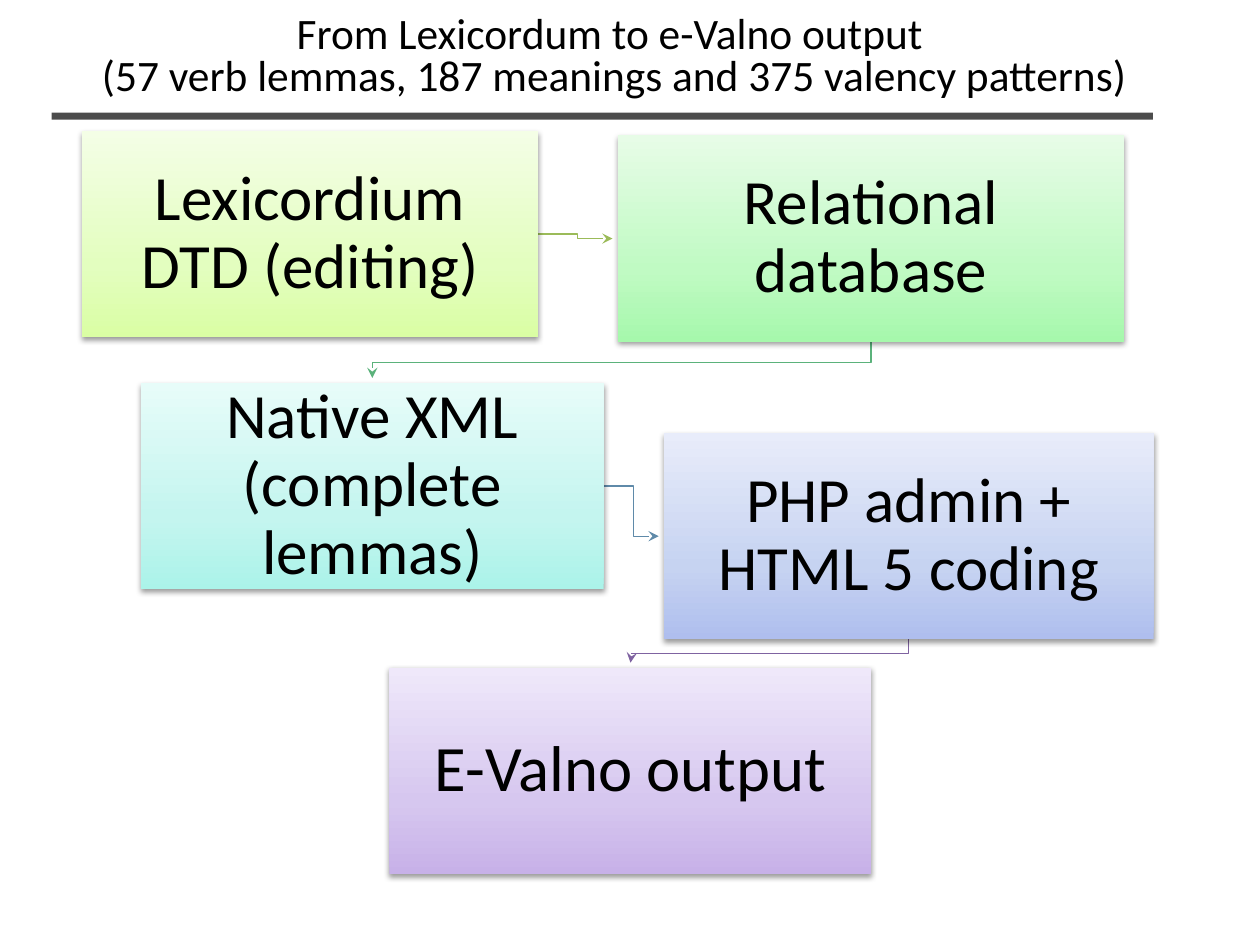
from copy import deepcopy
from itertools import pairwise

from lxml.etree import SubElement
from pptx import Presentation
from pptx.dml.color import RGBColor
from pptx.enum.shapes import MSO_CONNECTOR, MSO_SHAPE
from pptx.enum.text import MSO_ANCHOR, MSO_AUTO_SIZE, PP_ALIGN
from pptx.oxml.ns import qn
from pptx.util import Cm, Pt

STEP_HEIGHT = 4.16
ARROW_GAP = 0.1
STEPS = [
    ("Lexicordium DTD (editing)", (1.65, 2.64, 9.2), 36,
     ("DAFEA4", "E3FEBF", "F4FEE6")),
    ("Relational database", (12.45, 2.73, 10.22), 36,
     ("A6F8AC", "C0FAC3", "E7FCE7")),
    ("Native XML (complete lemmas)", (2.84, 7.72, 9.33), 36,
     ("ABF3E9", "C4F5EF", "E7FCF9")),
    ("PHP admin + HTML 5 coding", (13.38, 8.73, 9.88), 36,
     ("AFBEEE", "C6D3F1", "E8ECFA")),
    ("E-Valno output", (7.85, 13.46, 9.72), 37,
     ("C7B1E8", "D6C7EF", "EFE8FA")),
]
ARROW_COLORS = ["9BBB59", "5BB27B", "5F8AA9", "7F63A1"]


def color(hex_string):
    return RGBColor.from_string(hex_string)


def write_text(frame, lines, size, spacing, inset_x, inset_y):
    frame.word_wrap = True
    frame.auto_size = MSO_AUTO_SIZE.NONE
    frame.vertical_anchor = MSO_ANCHOR.MIDDLE
    frame.margin_left = frame.margin_right = Cm(inset_x)
    frame.margin_top = frame.margin_bottom = Cm(inset_y)
    frame.text = "\n".join(lines)
    for para in frame.paragraphs:
        para.alignment = PP_ALIGN.CENTER
        para.line_spacing = spacing
        para.font.size = Pt(size)
        para.font.name = "Calibri"
        para.font.color.rgb = color("000000")


def add_heading(page, left, top, width, height):
    title = page.shapes.title
    title.left, title.top = Cm(left), Cm(top)
    title.width, title.height = Cm(width), Cm(height)
    lines = ["From Lexicordum to e-Valno output ",
             "(57 verb lemmas, 187 meanings and 375 valency patterns)"]
    write_text(title.text_frame, lines, 24.8, 0.8, 0.25, 0.13)

    bottom = Cm(top + height)
    rule = page.shapes.add_connector(
        MSO_CONNECTOR.STRAIGHT, Cm(left), bottom, Cm(left + 22.2), bottom)
    rule.line.width = Pt(4)
    rule.line.color.rgb = color("000000")
    properties = rule._element.spPr
    shade = properties.find(".//" + qn("a:srgbClr"))
    SubElement(shade, qn("a:alpha"), val="70000")
    SubElement(properties, qn("a:effectLst"))


def fill_gradient(shape, shades):
    shape.fill.gradient()
    shape.fill.gradient_angle = 90
    stops = shape._element.spPr.find(".//" + qn("a:gsLst"))
    stops.append(deepcopy(stops[-1]))
    for stop, position, shade in zip(
            shape.fill.gradient_stops, (0, 0.35, 1), shades):
        stop.position = position
        stop.color.rgb = color(shade)


def add_soft_shadow(shape):
    shape.shadow.inherit = False
    effects = shape._element.spPr.find(qn("a:effectLst"))
    shadow = SubElement(
        effects, qn("a:outerShdw"), blurRad=str(Pt(3.1)), dist=str(Pt(1.6)),
        dir="5400000", rotWithShape="0")
    shade = SubElement(shadow, qn("a:srgbClr"), val="000000")
    SubElement(shade, qn("a:alpha"), val="38000")


def add_step(page, text, box, size, shades):
    left, top, width = box
    step = page.shapes.add_shape(
        MSO_SHAPE.RECTANGLE, Cm(left), Cm(top), Cm(width), Cm(STEP_HEIGHT))
    step.line.fill.background()
    fill_gradient(step, shades)
    add_soft_shadow(step)
    inset = size * 0.02
    write_text(step.text_frame, [text], size, 0.9, inset, inset)


def elbow_points(source, target):
    left, top, width = source
    next_left, next_top, next_width = target
    if next_left > left + width:
        start_y, end_y = top + STEP_HEIGHT / 2, next_top + STEP_HEIGHT / 2
        middle = (left + width + next_left) / 2
        return [(left + width, start_y), (middle, start_y),
                (middle, end_y), (next_left - ARROW_GAP, end_y)]
    start_x, end_x = left + width / 2, next_left + next_width / 2
    bottom = top + STEP_HEIGHT
    middle = (bottom + next_top) / 2
    return [(start_x, bottom), (start_x, middle),
            (end_x, middle), (end_x, next_top - ARROW_GAP)]


def add_arrow(page, source, target, shade):
    start, *others = [(Cm(x), Cm(y)) for x, y in elbow_points(source, target)]
    builder = page.shapes.build_freeform(*start)
    builder.add_line_segments(others, close=False)
    arrow = builder.convert_to_shape()
    arrow.fill.background()
    arrow.shadow.inherit = False
    arrow.line.width = Pt(0.75)
    arrow.line.color.rgb = color(shade)
    outline = arrow._element.spPr.find(qn("a:ln"))
    SubElement(outline, qn("a:tailEnd"), type="stealth")


def add_flow(page):
    boxes = [box for _, box, _, _ in STEPS]
    for (source, target), shade in zip(pairwise(boxes), ARROW_COLORS):
        add_arrow(page, source, target, shade)
    for step in STEPS:
        add_step(page, *step)


def main():
    deck = Presentation()
    deck.slide_width, deck.slide_height = Cm(25.4), Cm(19.05)
    page = deck.slides.add_slide(deck.slide_layouts[5])
    add_flow(page)
    add_heading(page, 1.04, 0, 22.71, 2.34)
    deck.save("out.pptx")


if __name__ == "__main__":
    main()
